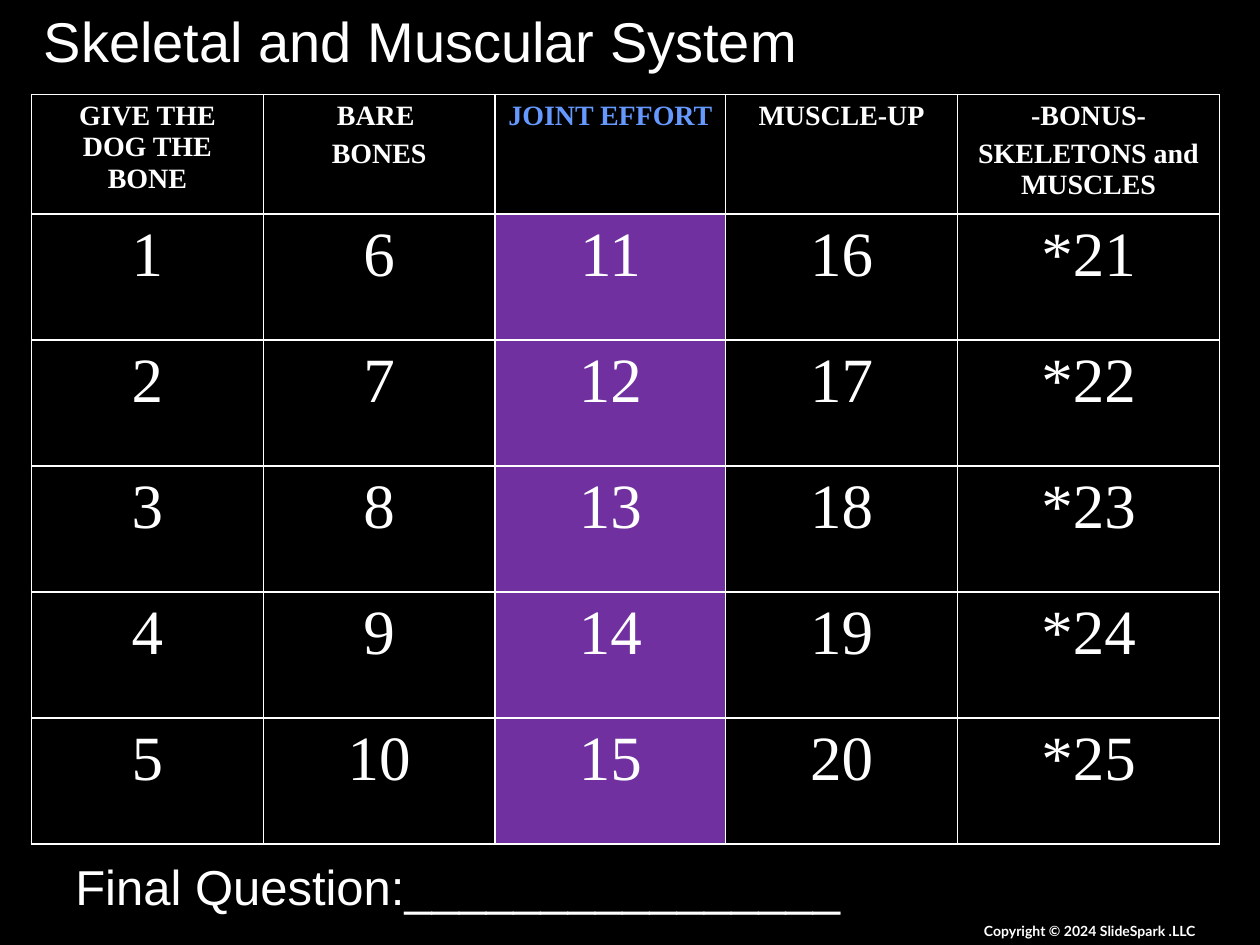
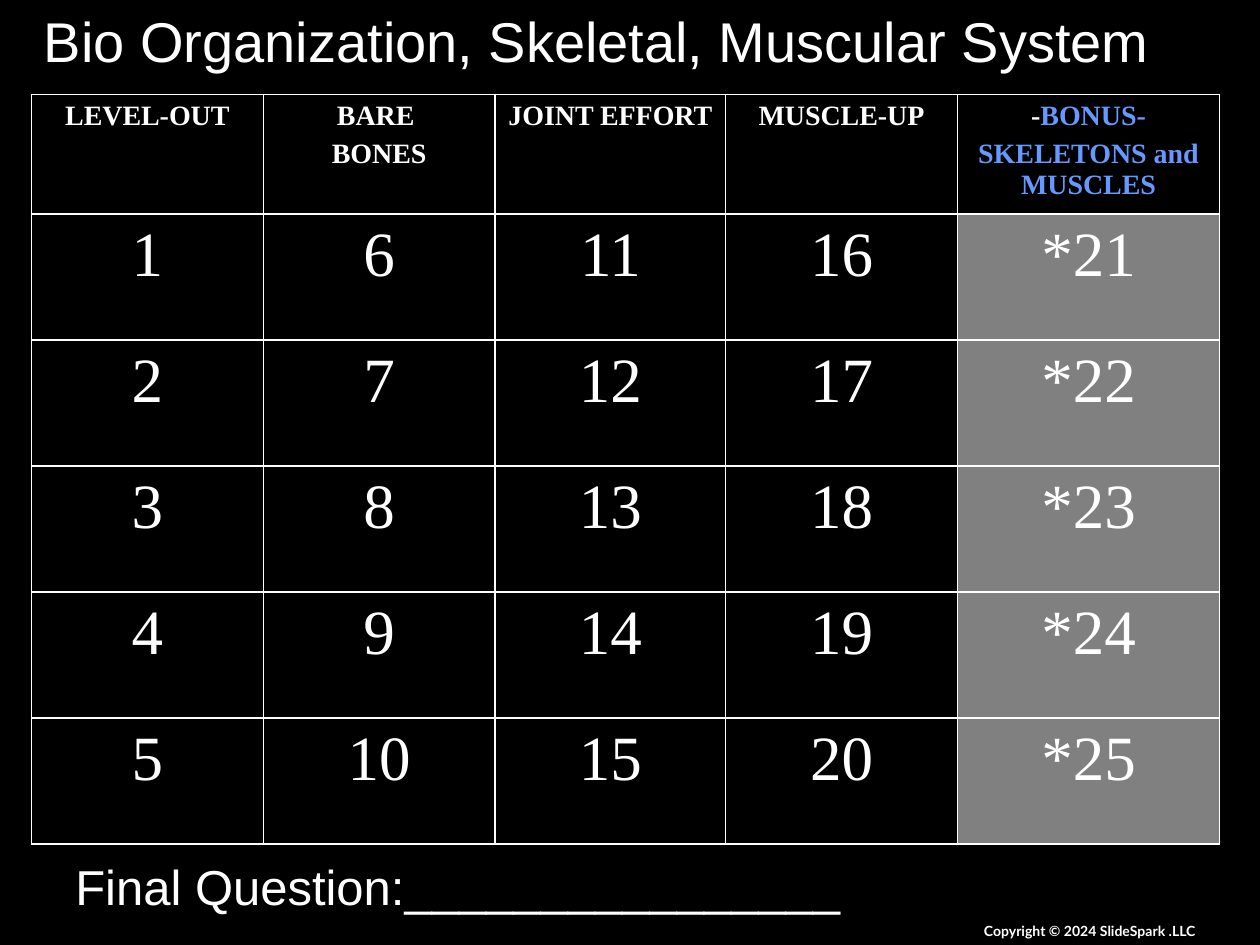
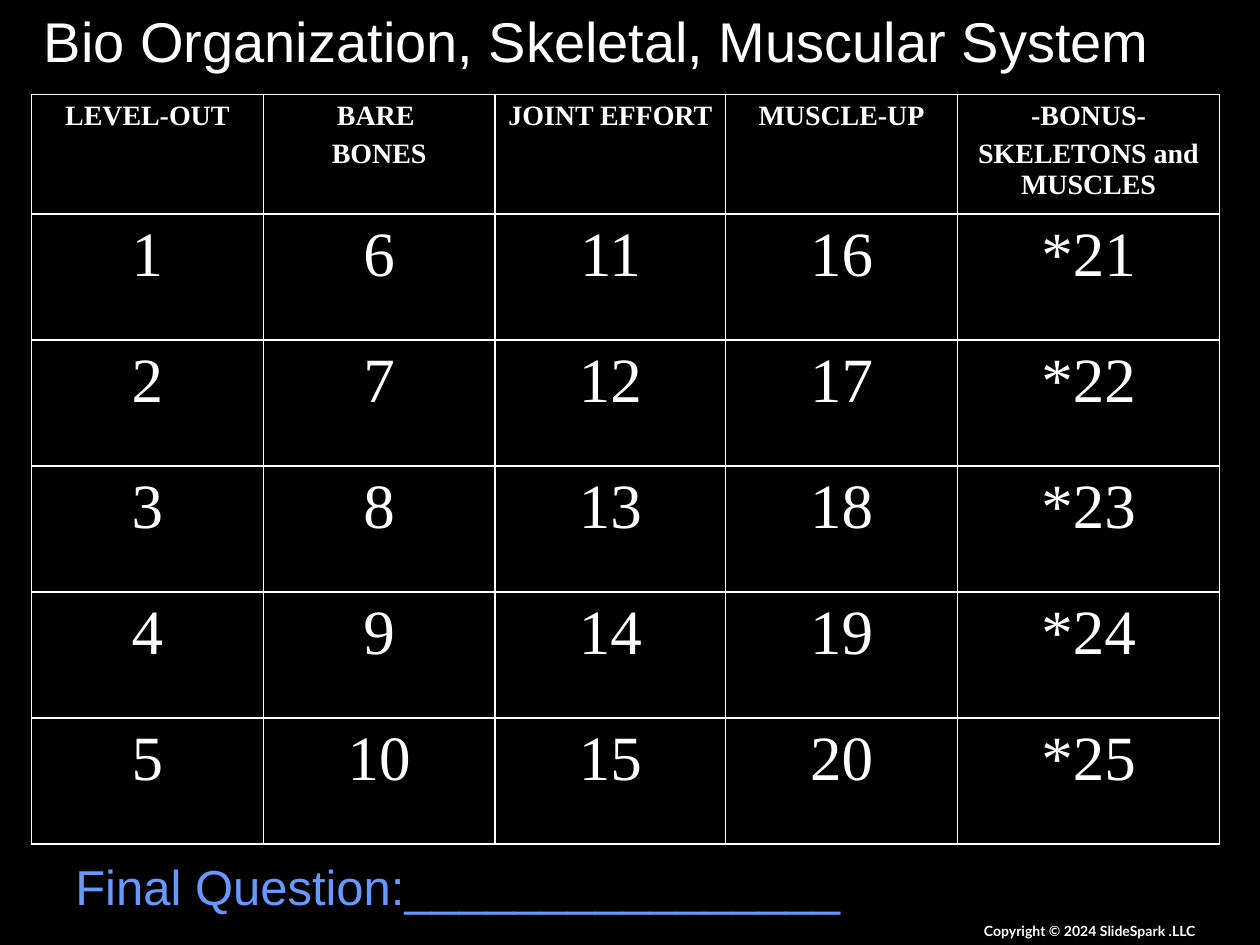
from lxml.etree import SubElement
from pptx import Presentation
from pptx.dml.color import RGBColor
from pptx.enum.text import MSO_AUTO_SIZE, PP_ALIGN
from pptx.oxml.ns import qn
from pptx.util import Inches, Pt

WHITE, BLACK, ACCENT = "FFFFFF", "000000", "6699FF"
PURPLE, GRAY = "7030A0", "808080"

TITLE = {"size": Pt(32), "name": "Arial", "bold": False}
FINAL = {"size": Pt(28), "name": "Arial", "bold": False}
COPYRIGHT = {"size": Pt(8), "name": "Lato", "bold": True}
CATEGORY = {"size": Pt(16), "name": "Times New Roman", "bold": True}
NUMBER = {"size": Pt(36), "name": "Times New Roman", "bold": False}

COLUMN_WIDTHS = [1.84, 1.84, 1.83, 1.84, 2.08]
ROW_HEIGHTS = [0.95, 1, 1, 1, 1, 1]
QUESTIONS = len(ROW_HEIGHTS) - 1
BONUS_COLUMN = len(COLUMN_WIDTHS) - 1

BIO_TITLE = "Bio Organization, Skeletal, Muscular System"
SHARED_CATEGORIES = [
    ["BARE ", "BONES"],
    ["JOINT EFFORT"],
    ["MUSCLE-UP"],
    ["-BONUS-", "SKELETONS and MUSCLES"],
]
BOARDS = [
    {"title": "Skeletal and Muscular System", "first": "GIVE THE DOG THE BONE",
     "active": 2, "fill": PURPLE},
    {"title": BIO_TITLE, "first": "LEVEL-OUT", "active": BONUS_COLUMN,
     "fill": GRAY, "plain_start": "-"},
    {"title": BIO_TITLE, "first": "LEVEL-OUT", "final_color": ACCENT},
]


def rgb(value):
    """Turn a hex string into a colour."""
    return RGBColor.from_string(value)


class QuizDeck:
    """Holds the quiz board style and the current slide."""

    def __init__(self):
        """Start a deck of 10 by 7.5 inch slides."""
        self.deck = Presentation()
        self.deck.slide_width = Inches(10)
        self.deck.slide_height = Inches(7.5)
        self.slide = None

    def add_slide(self):
        """Add a blank slide with the black background."""
        self.slide = self.deck.slides.add_slide(self.deck.slide_layouts[6])
        background = self.slide.background.fill
        background.solid()
        background.fore_color.rgb = rgb(BLACK)

    def set_text(self, frame, paragraphs, style, align):
        """Fill a text frame with paragraphs of (text, colour) runs."""
        for index, pieces in enumerate(paragraphs):
            paragraph = frame.add_paragraph() if index else frame.paragraphs[0]
            paragraph.alignment = align
            if index:
                paragraph.space_before = Pt(3.5)
            for text, color in pieces:
                run = paragraph.add_run()
                run.text = text
                for attribute, value in style.items():
                    setattr(run.font, attribute, value)
                run.font.color.rgb = rgb(color)

    def add_text(self, box, text, style, color=WHITE, align=PP_ALIGN.LEFT):
        """Add a one-line text box."""
        frame = self.slide.shapes.add_textbox(*map(Inches, box)).text_frame
        frame.word_wrap = True
        frame.auto_size = MSO_AUTO_SIZE.SHAPE_TO_FIT_TEXT
        self.set_text(frame, [[(text, color)]], style, align)

    def outline(self, cell):
        """Draw white borders around a cell."""
        properties = cell._tc.get_or_add_tcPr()
        for side in ("a:lnL", "a:lnR", "a:lnT", "a:lnB"):
            line = SubElement(properties, qn(side), w=str(Pt(1)))
            fill = SubElement(line, qn("a:solidFill"))
            SubElement(fill, qn("a:srgbClr"), val=WHITE)

    def fill_cell(self, cell, paragraphs, style, fill=None):
        """Outline and fill one cell and set its text."""
        self.outline(cell)
        if fill:
            cell.fill.solid()
            cell.fill.fore_color.rgb = rgb(fill)
        else:
            cell.fill.background()
        self.set_text(cell.text_frame, paragraphs, style, PP_ALIGN.CENTER)

    def add_grid(self, first, active=None, fill=None, plain_start=""):
        """Add the category table with its numbered questions."""
        grid = self.slide.shapes.add_table(
            len(ROW_HEIGHTS), len(COLUMN_WIDTHS), Inches(0.25), Inches(0.75),
            Inches(sum(COLUMN_WIDTHS)), Inches(sum(ROW_HEIGHTS))).table
        grid.first_row = grid.horz_banding = False
        for column, width in zip(grid.columns, COLUMN_WIDTHS):
            column.width = Inches(width)
        for row, height in zip(grid.rows, ROW_HEIGHTS):
            row.height = Inches(height)

        for column, lines in enumerate([[first], *SHARED_CATEGORIES]):
            is_active = column == active
            color = ACCENT if is_active else WHITE
            heading = [[(line, color)] for line in lines]
            if is_active and plain_start:
                heading[0] = [(plain_start, WHITE),
                              (lines[0].removeprefix(plain_start), color)]
            self.fill_cell(grid.cell(0, column), heading, CATEGORY)
            star = "*" if column == BONUS_COLUMN else ""
            for row in range(1, QUESTIONS + 1):
                number = f"{star}{column * QUESTIONS + row}"
                self.fill_cell(grid.cell(row, column), [[(number, WHITE)]],
                               NUMBER, fill if is_active else None)

    def add_board(self, title, final_color=WHITE, **grid):
        """Add one complete quiz board slide."""
        self.add_slide()
        self.add_grid(**grid)
        self.add_text((6.17, 7.27, 3.42, 0.23), "Copyright © 2024 SlideSpark .LLC",
                      COPYRIGHT, align=PP_ALIGN.RIGHT)
        self.add_text((0.25, 0, 9.75, 0.63), title, TITLE)
        self.add_text((0.5, 6.75, 6.58, 0.57), "Final Question:" + "_" * 16,
                      FINAL, final_color)


def main():
    """Build the quiz boards and save them."""
    quiz = QuizDeck()
    for board in BOARDS:
        quiz.add_board(**board)
    quiz.deck.save("out.pptx")


if __name__ == "__main__":
    main()
